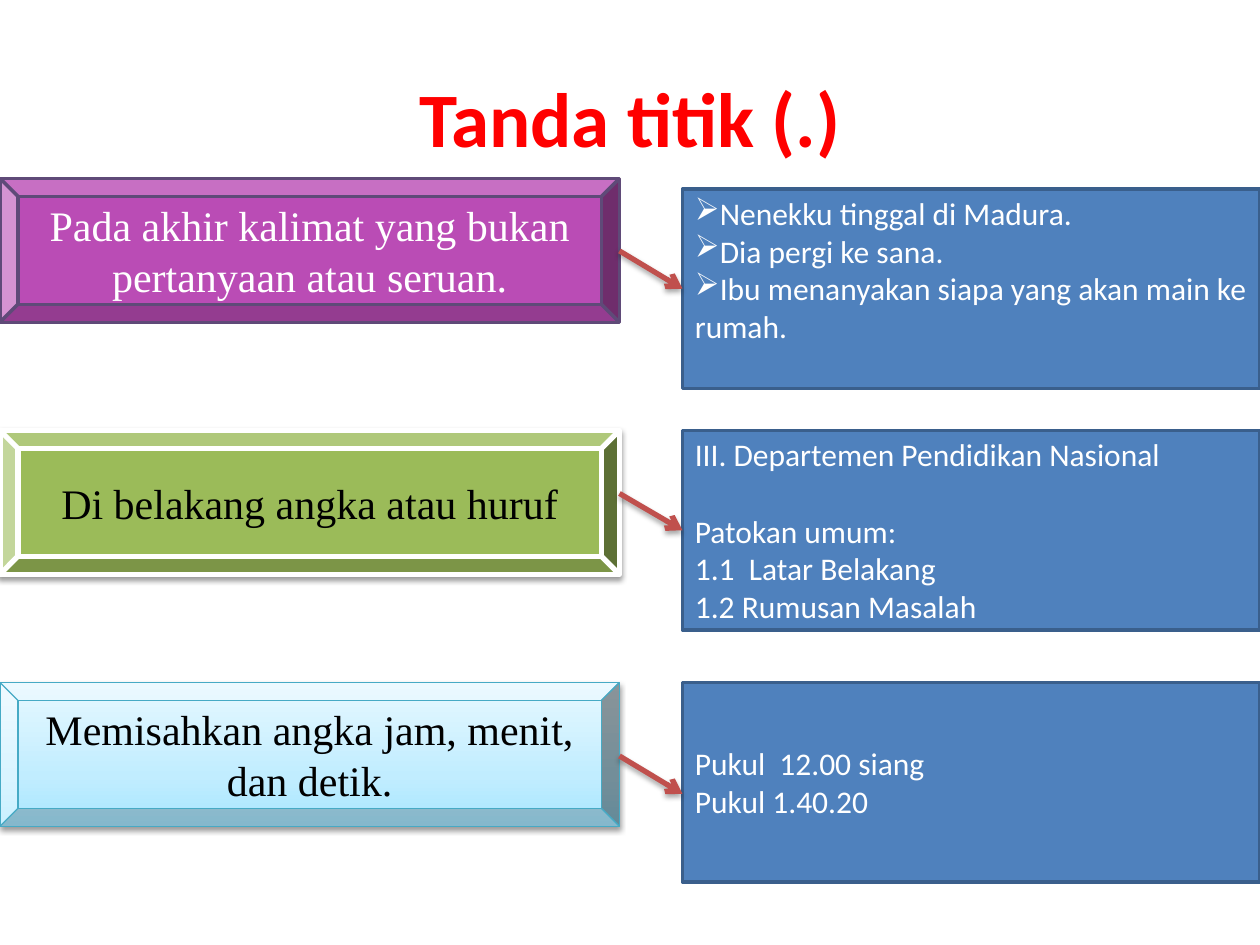
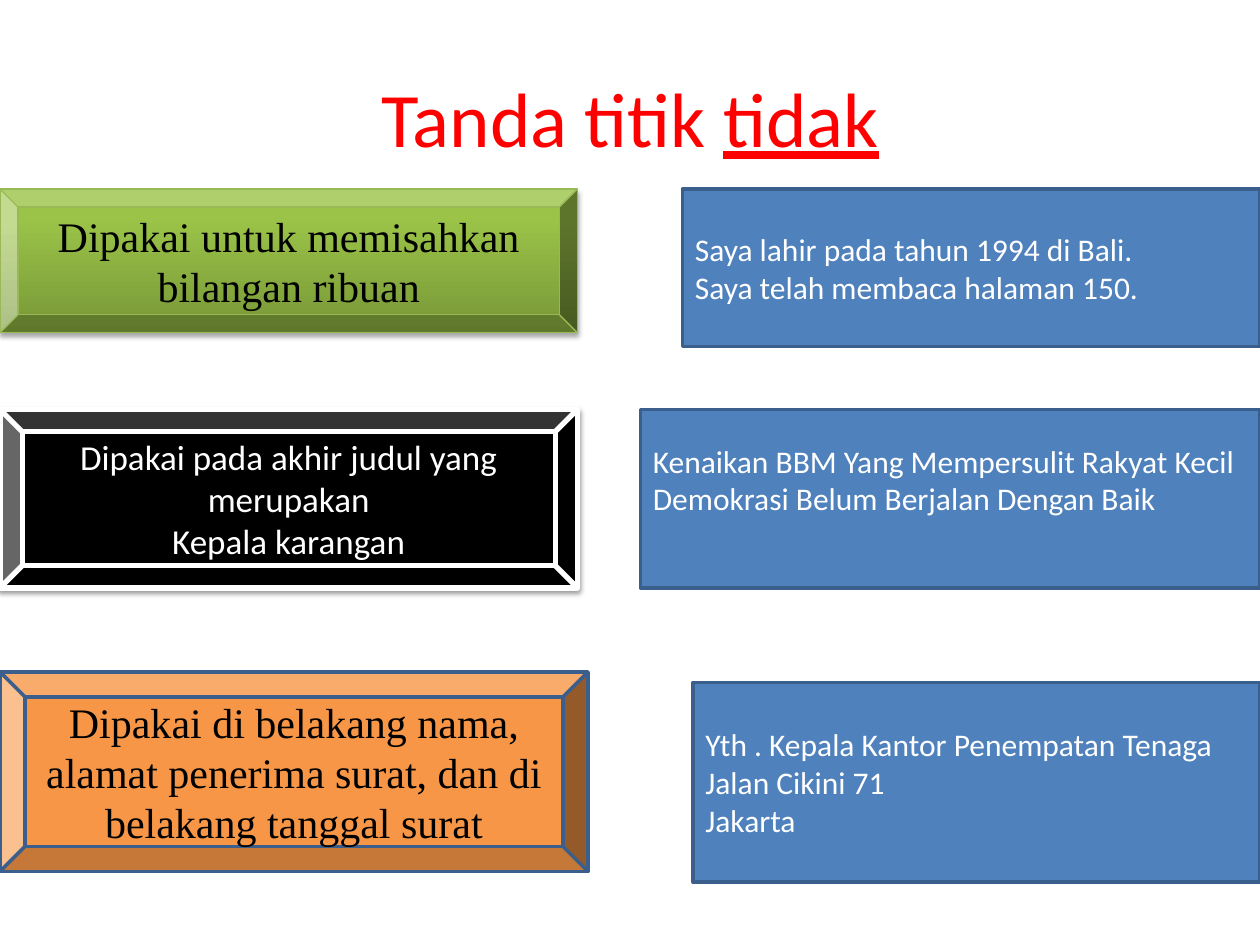
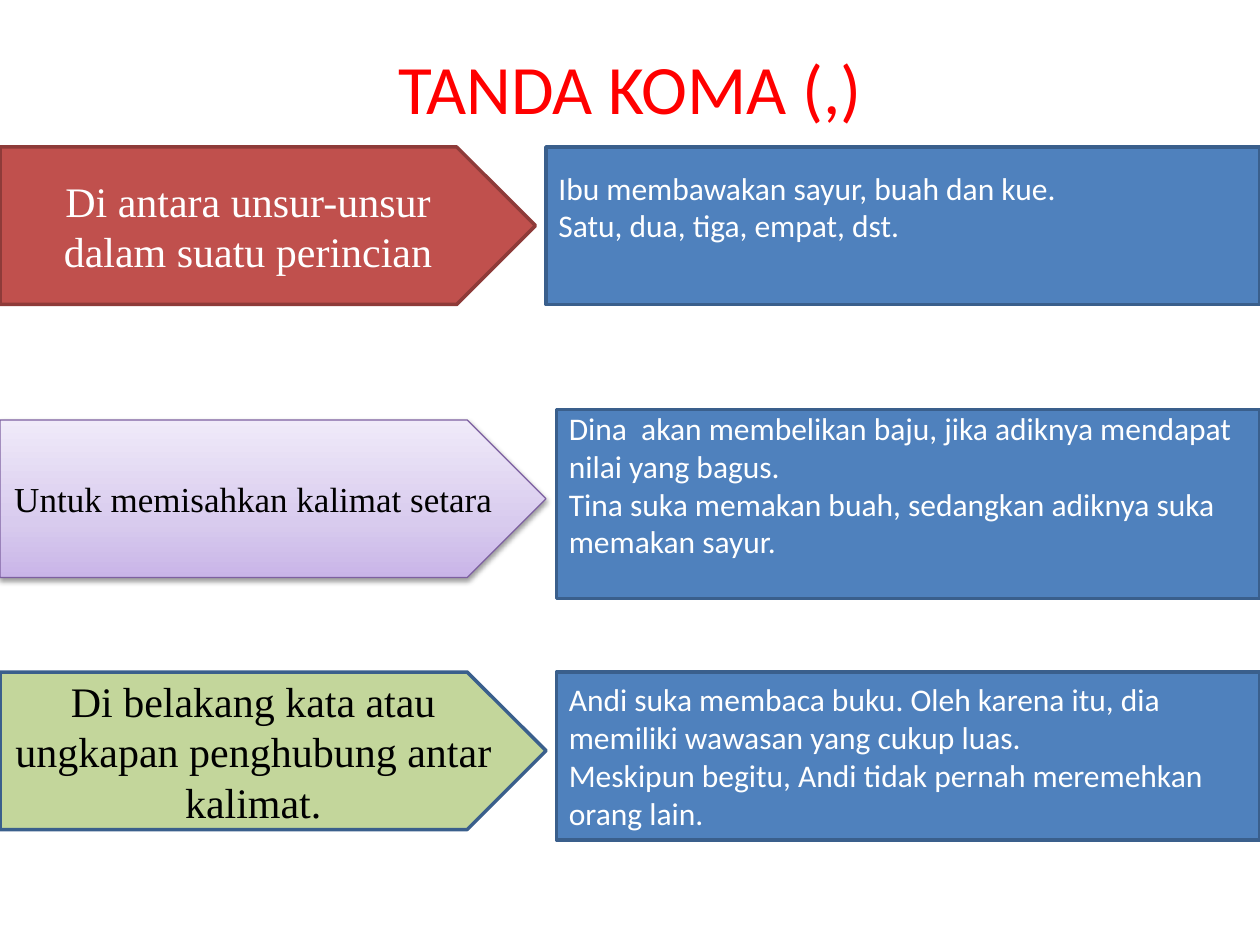
from dataclasses import dataclass

from lxml import etree
from pptx import Presentation
from pptx import util as u
from pptx.dml.color import RGBColor
from pptx.enum import shapes, text
from pptx.oxml import ns

COLUMNS, ROWS = 120, 90
CELL = u.Inches(10) // COLUMNS
BLANK_LAYOUT = 6

WHITE = RGBColor(0xFF, 0xFF, 0xFF)
BLACK = RGBColor(0x00, 0x00, 0x00)
RED = RGBColor(0xFF, 0x00, 0x00)
BLUE = RGBColor(0x4F, 0x81, 0xBD)
NAVY = RGBColor(0x3A, 0x5F, 0x8C)
BRICK = RGBColor(0xC0, 0x50, 0x4D)
DARK_BRICK = RGBColor(0x8E, 0x3B, 0x39)
MAGENTA = RGBColor(0xBA, 0x4C, 0xB5)
PLUM = RGBColor(0x5F, 0x4A, 0x78)
OLIVE = RGBColor(0x9B, 0xBB, 0x59)
LEAF = RGBColor(0x98, 0xB9, 0x55)
PALE_GREEN = RGBColor(0xC3, 0xD6, 0x9B)
ORANGE = RGBColor(0xF7, 0x96, 0x46)
TEAL = RGBColor(0x46, 0xAA, 0xC5)
VIOLET = RGBColor(0x7D, 0x60, 0xA0)
SKY_BLEND = ((0, RGBColor(0xA7, 0xE6, 0xFF)), (35, RGBColor(0xC1, 0xED, 0xFF)),
             (100, RGBColor(0xE7, 0xF8, 0xFF)))
GREEN_BLEND = ((0, RGBColor(0x77, 0x97, 0x37)), (80, RGBColor(0x9B, 0xC3, 0x48)),
               (100, RGBColor(0x9D, 0xC7, 0x46)))
LILAC_BLEND = ((0, RGBColor(0xC9, 0xB5, 0xE8)), (35, RGBColor(0xD8, 0xCB, 0xEE)),
               (100, RGBColor(0xF0, 0xEA, 0xF9)))

BODY_FONT, RULE_FONT = "Calibri", "Times New Roman"
EXAMPLE_SIZE = 18
LINE_HEIGHT = u.Pt(22)
BEVEL = shapes.MSO_SHAPE.BEVEL
PENTAGON = shapes.MSO_SHAPE.PENTAGON
SOFT, STRONG = (38, 1.6), (35, 1.8)


@dataclass
class Look:
    """Fill, outline, text colour and shadow of a rule label."""
    fill: object
    line: RGBColor
    width: float = 2
    ink: RGBColor = BLACK
    shadow: tuple = None


@dataclass
class Rule:
    """A rule label: its row, width and height in cells, and its text."""
    row: float
    width: float
    height: float
    lines: list
    look: Look
    font: str = RULE_FONT
    size: float = 24


@dataclass
class Example:
    """An example panel that reaches from its column to the right edge."""
    column: float
    row: float
    height: float
    lines: list
    bullet: str = None
    gap_before: int = None
    open_line: bool = False


def cells(*counts):
    """Turn grid counts into lengths."""
    return [u.Emu(round(count * CELL)) for count in counts]


def add_xml(parent, tag, **attributes):
    """Add a drawing element under a parent."""
    return etree.SubElement(parent, ns.qn(tag), {k: str(v) for k, v in attributes.items()})


def write(frame, lines, font=BODY_FONT, size=EXAMPLE_SIZE, color=WHITE, bold=False,
          align=text.PP_ALIGN.LEFT, bullet=None, gap_before=None, underlined=None):
    """Write paragraphs in one format, with an optional underlined ending."""
    frame.word_wrap = True
    frame.vertical_anchor = text.MSO_ANCHOR.MIDDLE
    for index, line in enumerate(lines):
        paragraph = frame.add_paragraph() if index else frame.paragraphs[0]
        paragraph.alignment = align
        if index and index == gap_before:
            paragraph.space_before = LINE_HEIGHT
        if bullet:
            add_xml(paragraph._p.get_or_add_pPr(), "a:buChar", char=bullet)
        paragraph.font.size = u.Pt(size)
        runs = [(line, None)] + ([(underlined, True)] if underlined else [])
        for words, underline in runs:
            run = paragraph.add_run()
            run.text = words
            run.font.name, run.font.size = font, u.Pt(size)
            run.font.bold, run.font.underline = bold, underline
            run.font.color.rgb = color


def set_shadow(properties, shadow):
    """Give shape properties a downward shadow, or none at all."""
    effects = add_xml(properties, "a:effectLst")
    if shadow:
        opacity, distance = shadow
        outer = add_xml(effects, "a:outerShdw", blurRad=u.Pt(3.1), dist=u.Pt(distance),
                        dir=90 * 60000, rotWithShape=0)
        shade = add_xml(outer, "a:srgbClr", val=BLACK)
        add_xml(shade, "a:alpha", val=opacity * 1000)


def set_fill(shape, fill):
    """Fill a shape with a colour, or with blend stops rising from its foot."""
    if isinstance(fill, RGBColor):
        shape.fill.solid()
        shape.fill.fore_color.rgb = fill
        return
    shape.fill.gradient()
    gradient = shape._element.spPr.find(ns.qn("a:gradFill"))
    for child in list(gradient):
        gradient.remove(child)
    stops = add_xml(gradient, "a:gsLst")
    for position, color in fill:
        add_xml(add_xml(stops, "a:gs", pos=position * 1000), "a:srgbClr", val=color)
    add_xml(gradient, "a:lin", ang=270 * 60000, scaled=0)


def add_panel(slide, preset, box, look):
    """Draw a preset shape in a grid box with the given look."""
    panel = slide.shapes.add_shape(preset, *cells(*box))
    set_fill(panel, look.fill)
    panel.line.color.rgb = look.line
    panel.line.width = u.Pt(look.width)
    set_shadow(panel._element.spPr, look.shadow)
    return panel


def add_title(slide, words, height=15, **style):
    """Place the red centred title."""
    title = slide.shapes.add_textbox(*cells(6, 3.6, COLUMNS - 12, height))
    write(title.text_frame, [words], color=RED, align=text.PP_ALIGN.CENTER,
          **{"size": 44, **style})


def add_rule(slide, preset, rule):
    """Place a rule label against the left edge."""
    label = add_panel(slide, preset, (0, rule.row, rule.width, rule.height), rule.look)
    write(label.text_frame, rule.lines, font=rule.font, size=rule.size,
          color=rule.look.ink, align=text.PP_ALIGN.CENTER)


def add_example(slide, example):
    """Place a blue example panel against the right edge."""
    box = (example.column, example.row, COLUMNS - example.column, example.height)
    panel = add_panel(slide, shapes.MSO_SHAPE.RECTANGLE, box, Look(BLUE, NAVY))
    if example.open_line:
        panel.text_frame.margin_bottom += LINE_HEIGHT
    write(panel.text_frame, example.lines, bullet=example.bullet,
          gap_before=example.gap_before)
    return panel


def add_arrow(slide, rule, example, panel, start_row, end_row=None):
    """Lead from a rule to its example, joined unless an end row is given."""
    ends = cells(rule.width, start_row, example.column, end_row or example.row)
    arrow = slide.shapes.add_connector(shapes.MSO_CONNECTOR.STRAIGHT, *ends)
    if end_row is None:
        arrow.end_connect(panel, 1)
    arrow.line.color.rgb = BRICK
    arrow.line.width = u.Pt(3)
    add_xml(arrow.line._get_or_add_ln(), "a:tailEnd", type="arrow")
    set_shadow(arrow._element.spPr, STRONG)


def add_rules_slide(deck, title, preset, rules, examples, arrows=()):
    """Build a slide of rules on the left and examples on the right."""
    slide = deck.slides.add_slide(deck.slide_layouts[BLANK_LAYOUT])
    add_title(slide, **title)
    for rule in rules:
        add_rule(slide, preset, rule)
    panels = [add_example(slide, example) for example in examples]
    for rule, example, panel, rows in zip(rules, examples, panels, arrows):
        add_arrow(slide, rule, example, panel, *rows)


def main():
    """Build the three punctuation slides."""
    deck = Presentation()
    deck.slide_width, deck.slide_height = cells(COLUMNS, ROWS)

    add_rules_slide(
        deck, {"words": "Tanda titik (.)", "bold": True}, BEVEL,
        [Rule(17, 59, 13.7, ["Pada akhir kalimat yang bukan pertanyaan atau seruan."],
              Look(MAGENTA, PLUM, ink=WHITE)),
         Rule(41, 59, 13.7, ["Di belakang angka atau huruf"],
              Look(OLIVE, WHITE, 3, shadow=SOFT)),
         Rule(65, 59, 13.7, ["Memisahkan angka jam, menit, dan detik."],
              Look(SKY_BLEND, TEAL, 0.75, shadow=SOFT))],
        [Example(65, 18, 19, ["Nenekku tinggal di Madura.", "Dia pergi ke sana.",
                              "Ibu menanyakan siapa yang akan main ke rumah."],
                 bullet="➢", open_line=True),
         Example(65, 41, 19, ["III. Departemen Pendidikan Nasional", "Patokan umum:",
                              "1.1  Latar Belakang", "1.2 Rumusan Masalah"], gap_before=1),
         Example(65, 65, 19, ["Pukul  12.00 siang", "Pukul 1.40.20"])],
        arrows=[(23.9,), (47,), (72, 75.6)])

    add_rules_slide(
        deck, {"words": "Tanda titik ", "underlined": "tidak"}, BEVEL,
        [Rule(18, 55, 13.7, ["Dipakai untuk memisahkan bilangan ribuan"],
              Look(GREEN_BLEND, LEAF, 0.75, shadow=STRONG)),
         Rule(39, 55, 17, ["Dipakai pada akhir judul yang merupakan", "Kepala karangan"],
              Look(BLACK, WHITE, 3, WHITE, SOFT), BODY_FONT, 20),
         Rule(64, 56, 19, ["Dipakai di belakang nama, alamat penerima surat, "
                           "dan di belakang tanggal surat"], Look(ORANGE, NAVY))],
        [Example(65, 18, 15, ["Saya lahir pada tahun 1994 di Bali.",
                              "Saya telah membaca halaman 150."]),
         Example(61, 39, 17, ["Kenaikan BBM Yang Mempersulit Rakyat Kecil",
                              "Demokrasi Belum Berjalan Dengan Baik"], open_line=True),
         Example(66, 65, 19, ["Yth . Kepala Kantor Penempatan Tenaga",
                              "Jalan Cikini 71", "Jakarta"])])

    add_rules_slide(
        deck, {"words": "TANDA KOMA (,)", "height": 9.4, "size": 39.6}, PENTAGON,
        [Rule(14, 51, 15, ["Di antara unsur-unsur dalam suatu perincian"],
              Look(BRICK, DARK_BRICK, ink=WHITE)),
         Rule(40, 52, 15, ["Untuk memisahkan kalimat setara"],
              Look(LILAC_BLEND, VIOLET, 0.75, shadow=SOFT), size=20),
         Rule(64, 52, 15, ["Di belakang kata atau ungkapan penghubung antar kalimat."],
              Look(PALE_GREEN, NAVY))],
        [Example(52, 14, 15, ["Ibu membawakan sayur, buah dan kue.",
                              "Satu, dua, tiga, empat, dst."], open_line=True),
         Example(53, 39, 18, ["Dina  akan membelikan baju, jika adiknya mendapat "
                              "nilai yang bagus.",
                              "Tina suka memakan buah, sedangkan adiknya suka "
                              "memakan sayur."], open_line=True),
         Example(53, 64, 16, ["Andi suka membaca buku. Oleh karena itu, dia memiliki "
                              "wawasan yang cukup luas.",
                              "Meskipun begitu, Andi tidak pernah meremehkan orang lain."])])

    deck.save("out.pptx")


if __name__ == "__main__":
    main()
